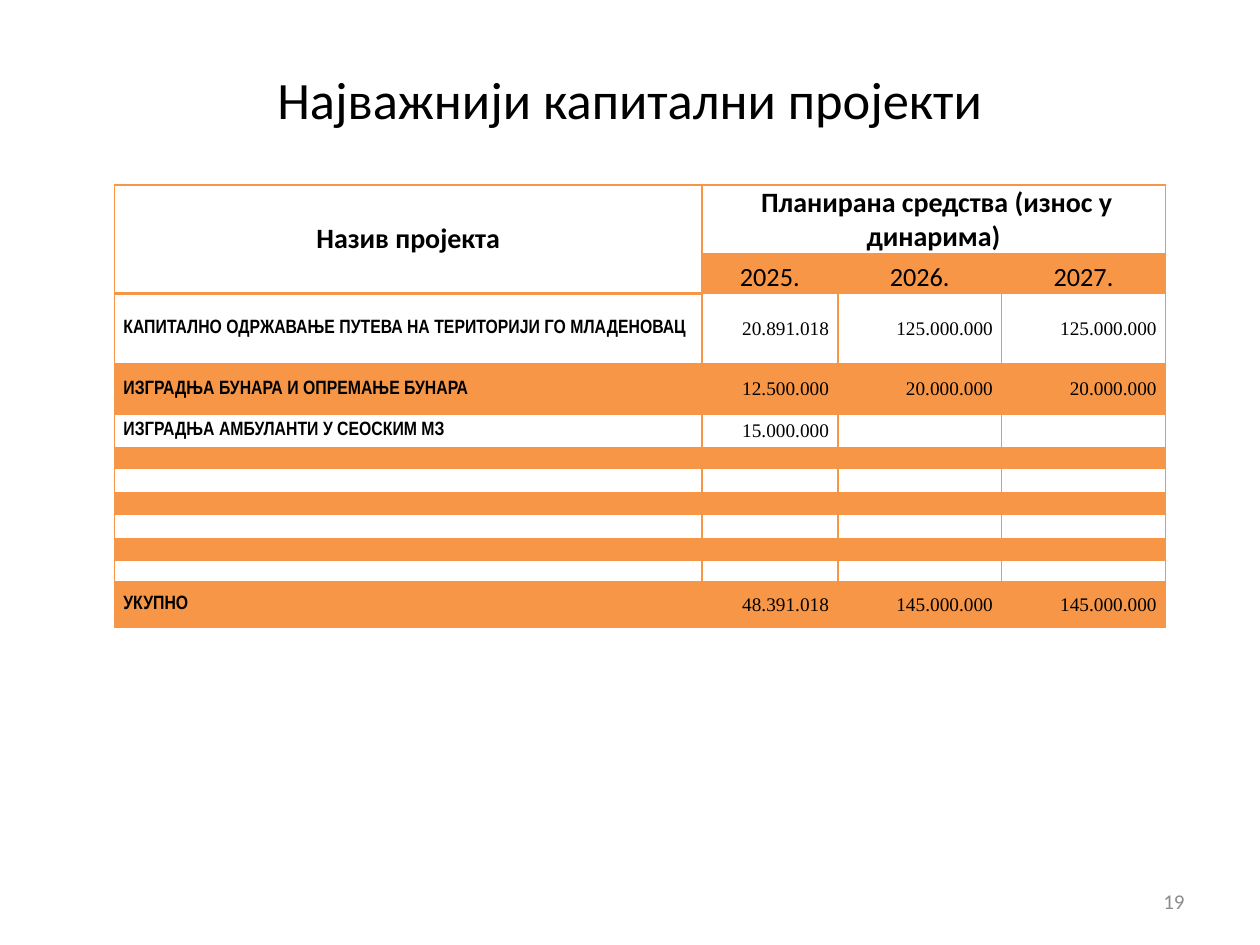
from lxml import etree
from pptx import Presentation
from pptx import util as u
from pptx.dml.color import RGBColor
from pptx.enum import text
from pptx.oxml import ns

COLORS = {"ink": "000000", "accent": "F79646", "number": "8C8C8C"}
WIDTH, HEIGHT = 10, 7.5
COLUMNS = [4.66, 1.08, 1.3, 1.3]
ROWS = [0.55, 0.31, 0.56, 0.4, 0.26, 0.17, 0.19, 0.17, 0.2, 0.17, 0.17, 0.36]
HEADERS = [
    ["Назив пројекта", " Планирана средства (износ у динарима)"],
    ["", "2025.", "2026.", "2027."],
]
PROJECTS = [
    ["КАПИТАЛНО ОДРЖАВАЊЕ ПУТЕВА НА ТЕРИТОРИЈИ ГО МЛАДЕНОВАЦ",
     "20.891.018", "125.000.000", "125.000.000"],
    ["ИЗГРАДЊА БУНАРА И ОПРЕМАЊЕ БУНАРА", "12.500.000", "20.000.000", "20.000.000"],
    ["ИЗГРАДЊА АМБУЛАНТИ У СЕОСКИМ МЗ", "15.000.000"],
]
TOTAL = ["УКУПНО", "48.391.018", "145.000.000", "145.000.000"]
EMPTY_ROWS = len(ROWS) - len(HEADERS) - len(PROJECTS) - 1
CONTENT = HEADERS + PROJECTS + [[]] * EMPTY_ROWS + [TOTAL]


def write(frame, words, size, font, color="ink", bold=False, align=text.PP_ALIGN.LEFT):
    """Set the words of a text frame and format them."""
    frame.text = words
    para = frame.paragraphs[0]
    para.alignment = align
    for span in para.runs:
        span.font.size = u.Pt(size)
        span.font.name = font
        span.font.bold = bold
        span.font.color.rgb = RGBColor.from_string(COLORS[color])
    if not words:
        etree.SubElement(para._p, ns.qn("a:endParaRPr"), sz=str(size * 100))


def draw_borders(cell, heavy_top, heavy_bottom):
    """Give a cell accent borders, with heavier lines where asked."""
    properties = cell._tc.get_or_add_tcPr()
    for side, points in (("L", 1), ("R", 1), ("T", 1 + heavy_top), ("B", 1 + heavy_bottom)):
        line = etree.SubElement(properties, ns.qn(f"a:ln{side}"), w=str(u.Pt(points)))
        fill = etree.SubElement(line, ns.qn("a:solidFill"))
        etree.SubElement(fill, ns.qn("a:srgbClr"), val=COLORS["accent"])


def shade(cell, banded):
    """Fill a banded cell with a pale accent and leave others clear."""
    if not banded:
        cell.fill.background()
        return
    cell.fill.solid()
    cell.fill.fore_color.rgb = RGBColor.from_string(COLORS["accent"])
    color = cell._tc.tcPr.find(".//" + ns.qn("a:srgbClr"))
    etree.SubElement(color, ns.qn("a:alpha"), val="20000")


def cell_style(row, column, words):
    """Return the text format that suits a cell's place in the table."""
    if not words:
        return {"size": 6, "font": "Calibri"}
    if row < len(HEADERS):
        return {"size": 16 - row, "font": "Calibri", "bold": row == 0,
                "align": text.PP_ALIGN.CENTER}
    if column == 0:
        return {"size": 11, "font": "Arial Narrow", "bold": True}
    return {"size": 11, "font": "Times New Roman", "align": text.PP_ALIGN.RIGHT}


def add_title(page, left, top, width, height):
    """Place and format the page title."""
    title = page.shapes.title
    title.left, title.top, title.width, title.height = map(u.Inches, (left, top, width, height))
    title.text_frame.vertical_anchor = text.MSO_ANCHOR.MIDDLE
    write(title.text_frame, "Најважнији капитални пројекти", 30, "Calibri",
          align=text.PP_ALIGN.CENTER)


def add_projects(page, left, top):
    """Build the table of projects and planned funds."""
    frame = page.shapes.add_table(len(ROWS), len(COLUMNS), *map(
        u.Inches, (left, top, sum(COLUMNS), sum(ROWS))))
    table = frame.table
    table.first_row = table.horz_banding = False
    for column, width in zip(table.columns, COLUMNS):
        column.width = u.Inches(width)
    for row, height in zip(table.rows, ROWS):
        row.height = u.Inches(height)
    table.cell(0, 0).merge(table.cell(1, 0))
    table.cell(0, 1).merge(table.cell(0, 3))
    for row, values in enumerate(CONTENT):
        for column in range(len(COLUMNS)):
            cell = table.cell(row, column)
            words = values[column] if column < len(values) else ""
            write(cell.text_frame, words, **cell_style(row, column, words))
            cell.margin_left = cell.margin_right = u.Inches(0.07)
            cell.margin_top = cell.margin_bottom = 0
            low_header = row < len(HEADERS) and column > 0
            cell.vertical_anchor = text.MSO_ANCHOR.BOTTOM if low_header else text.MSO_ANCHOR.MIDDLE
            header_end = 1 if column == 0 else 0
            draw_borders(cell, row == header_end + 1, row <= header_end)
            shade(cell, row % 2 == 1 and (row, column) != (1, 0))


def add_page_number(page, left, top, width, height):
    """Place the page number at the lower right."""
    box = page.shapes.add_textbox(*map(u.Inches, (left, top, width, height)))
    box.text_frame.word_wrap = True
    box.text_frame.vertical_anchor = text.MSO_ANCHOR.MIDDLE
    write(box.text_frame, "19", 12, "Calibri", "number", align=text.PP_ALIGN.RIGHT)


def main():
    """Build the deck and save it."""
    deck = Presentation()
    deck.slide_width, deck.slide_height = u.Inches(WIDTH), u.Inches(HEIGHT)
    page = deck.slides.add_slide(deck.slide_layouts[5])
    add_title(page, WIDTH * 0.05, HEIGHT * 0.04, WIDTH * 0.9, 0.96)
    add_projects(page, 0.91, 1.47)
    add_page_number(page, 7.17, 6.95, 2.33, 0.4)
    deck.save("out.pptx")


if __name__ == "__main__":
    main()
